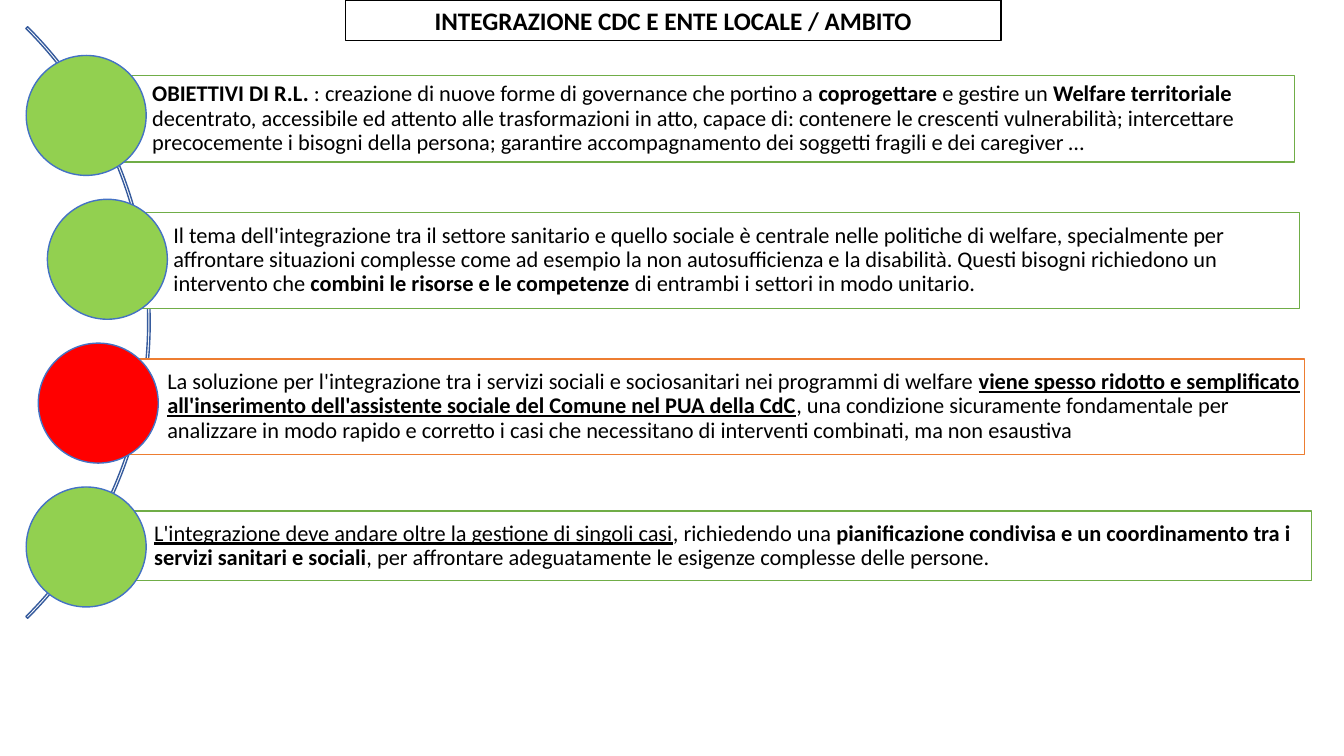
from dataclasses import dataclass

import pptx
import pptx.dml.color
import pptx.enum.shapes
import pptx.enum.text
import pptx.util

KIND = pptx.enum.shapes.MSO_SHAPE
ALIGN = pptx.enum.text.PP_ALIGN

# Square grid: one cell is a tenth of an inch
CELL = 0.1
COLS, ROWS = 133.33, 75
DISC = 11.9
DISC_TOP, DISC_STEP = 5.5, 14.27
PAD = 0.4

GREEN, LIME = "70AD47", "92D050"
ORANGE, RED = "ED7D31", "FF0000"
BLUE, NAVY = "4472C4", "365B9D"
WHITE, BLACK = "FFFFFF", "000000"


@dataclass(frozen=True)
class Span:
    text: str
    bold: bool = False
    under: bool = False


@dataclass(frozen=True)
class Box:
    left: float
    top: float
    width: float
    height: float


@dataclass(frozen=True)
class Step:
    box: Box
    disc: float  # left column of the circle
    edge: str
    fill: str
    spans: tuple[Span, ...]


TITLE = Span("INTEGRAZIONE CDC E ENTE LOCALE / AMBITO", bold=True)

STEPS = (
    Step(Box(7.6, 7.5, 120.8, 8.6), 2.6, GREEN, LIME, (
        Span("OBIETTIVI DI R.L.", bold=True),
        Span(" : creazione di nuove forme di governance che portino a "),
        Span("coprogettare", bold=True),
        Span(" e gestire un "),
        Span("Welfare territoriale ", bold=True),
        Span("decentrato, accessibile ed attento alle trasformazioni in atto, "
             "capace di: contenere le crescenti vulnerabilità; intercettare "
             "precocemente i bisogni della persona; garantire accompagnamento "
             "dei soggetti fragili e dei caregiver …"),
    )),
    Step(Box(9.7, 21.1, 119.2, 9.5), 4.7, GREEN, LIME, (
        Span("Il tema dell'integrazione tra il settore sanitario e quello "
             "sociale è centrale nelle politiche di welfare, specialmente per "
             "affrontare situazioni complesse come ad esempio la non "
             "autosufficienza e la disabilità. Questi bisogni richiedono un "
             "intervento che "),
        Span("combini le risorse e le competenze ", bold=True),
        Span("di entrambi i settori in modo unitario."),
    )),
    Step(Box(9.1, 35.6, 120.3, 9.5), 3.8, ORANGE, RED, (
        Span("La soluzione per l'integrazione tra i servizi sociali e "
             "sociosanitari nei programmi di welfare "),
        Span("viene spesso ridotto e semplificato all'inserimento "
             "dell'assistente sociale del Comune nel PUA della CdC",
             bold=True, under=True),
        Span(", una condizione sicuramente fondamentale per analizzare in "
             "modo rapido e corretto i casi che necessitano di interventi "
             "combinati, ma non esaustiva"),
    )),
    Step(Box(7.8, 50.7, 122.3, 6.9), 2.6, GREEN, LIME, (
        Span("L'integrazione deve andare oltre la gestione di singoli casi",
             under=True),
        Span(", richiedendo una "),
        Span("pianificazione condivisa e un coordinamento tra i servizi "
             "sanitari e sociali", bold=True),
        Span(", per affrontare adeguatamente le esigenze complesse delle "
             "persone."),
    )),
)


def cells(count: float) -> pptx.util.Length:
    return pptx.util.Inches(count * CELL)


def color(code: str) -> pptx.dml.color.RGBColor:
    return pptx.dml.color.RGBColor.from_string(code)


def draw(slide, kind, box: Box, edge: str, fill: str | None = None):
    shape = slide.shapes.add_shape(
        kind, cells(box.left), cells(box.top),
        cells(box.width), cells(box.height))
    shape.shadow.inherit = False
    if fill:
        shape.fill.solid()
        shape.fill.fore_color.rgb = color(fill)
    else:
        shape.fill.background()
    shape.line.color.rgb = color(edge)
    shape.line.width = pptx.util.Pt(1)
    return shape


def write(shape, spans: tuple[Span, ...], size: int, align,
          inset: float = PAD, space: float = 1.0) -> None:
    frame = shape.text_frame
    frame.word_wrap = True
    frame.vertical_anchor = pptx.enum.text.MSO_ANCHOR.MIDDLE
    frame.margin_left = cells(inset)
    frame.margin_right = frame.margin_top = frame.margin_bottom = cells(PAD)
    line = frame.paragraphs[0]
    line.alignment = align
    line.line_spacing = space
    for span in spans:
        run = line.add_run()
        run.text = span.text
        run.font.name = "Calibri"
        run.font.size = pptx.util.Pt(size)
        run.font.bold = span.bold
        run.font.underline = span.under
        run.font.color.rgb = color(BLACK)


def main() -> None:
    deck = pptx.Presentation()
    deck.slide_width, deck.slide_height = cells(COLS), cells(ROWS)
    slide = deck.slides.add_slide(deck.slide_layouts[6])

    # Title
    title = draw(slide, KIND.RECTANGLE, Box(34.3, 0, 65, 4), BLACK, WHITE)
    write(title, (TITLE,), 18, ALIGN.CENTER)

    # Thin arc behind the steps, from 315 to 45 degrees
    arc = draw(slide, KIND.BLOCK_ARC, Box(-68.1, -9.5, 83, 83), NAVY)
    for index, value in enumerate((189, 27, 0.003)):
        arc.adjustments[index] = value

    # Steps: a bar of text with its circle
    for row, step in enumerate(STEPS):
        bar = draw(slide, KIND.RECTANGLE, step.box, step.edge, WHITE)
        write(bar, step.spans, 16, ALIGN.LEFT, inset=7.5, space=0.9)
        spot = Box(step.disc, DISC_TOP + row * DISC_STEP, DISC, DISC)
        draw(slide, KIND.OVAL, spot, BLUE, step.fill)

    deck.save("out.pptx")


if __name__ == "__main__":
    main()
